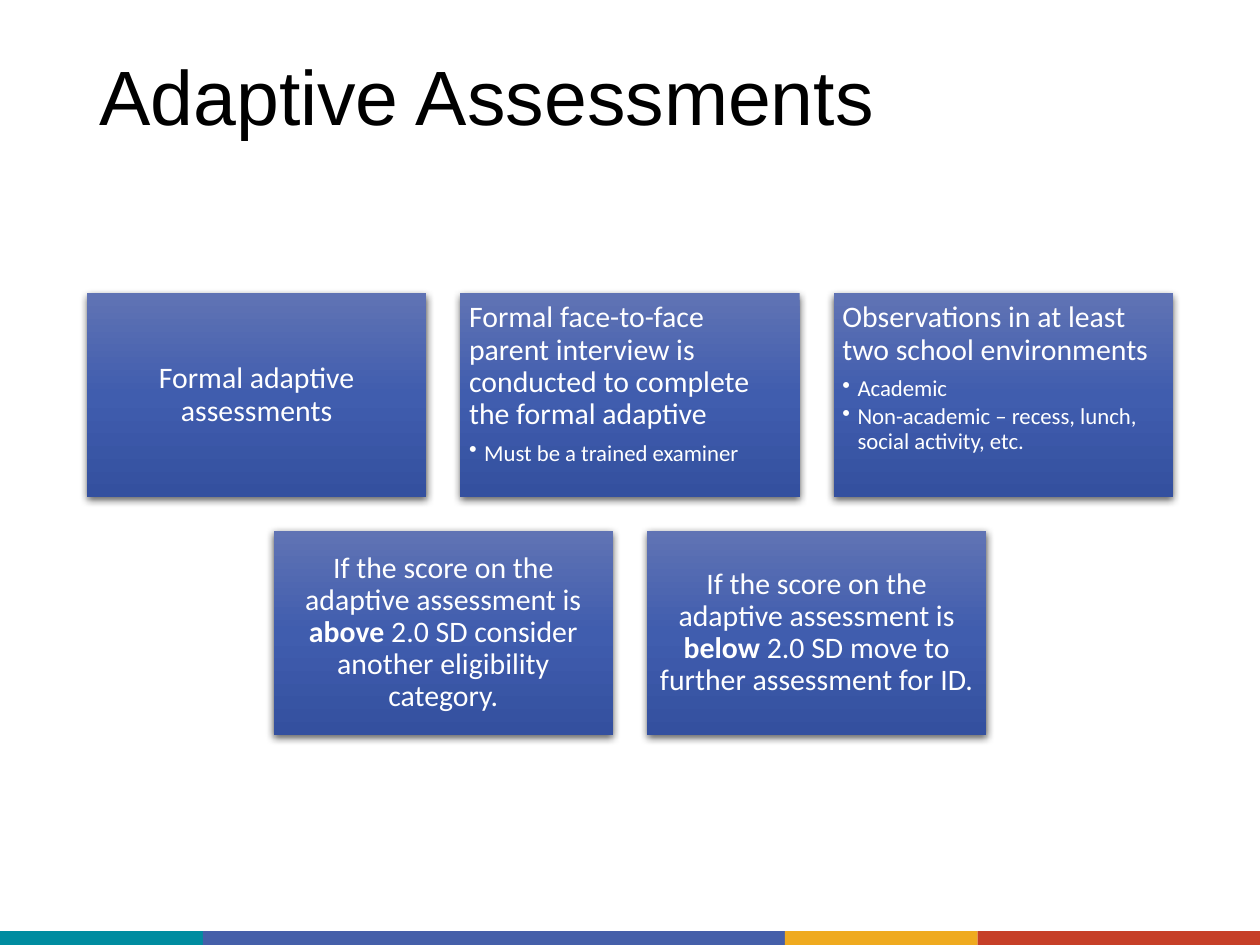
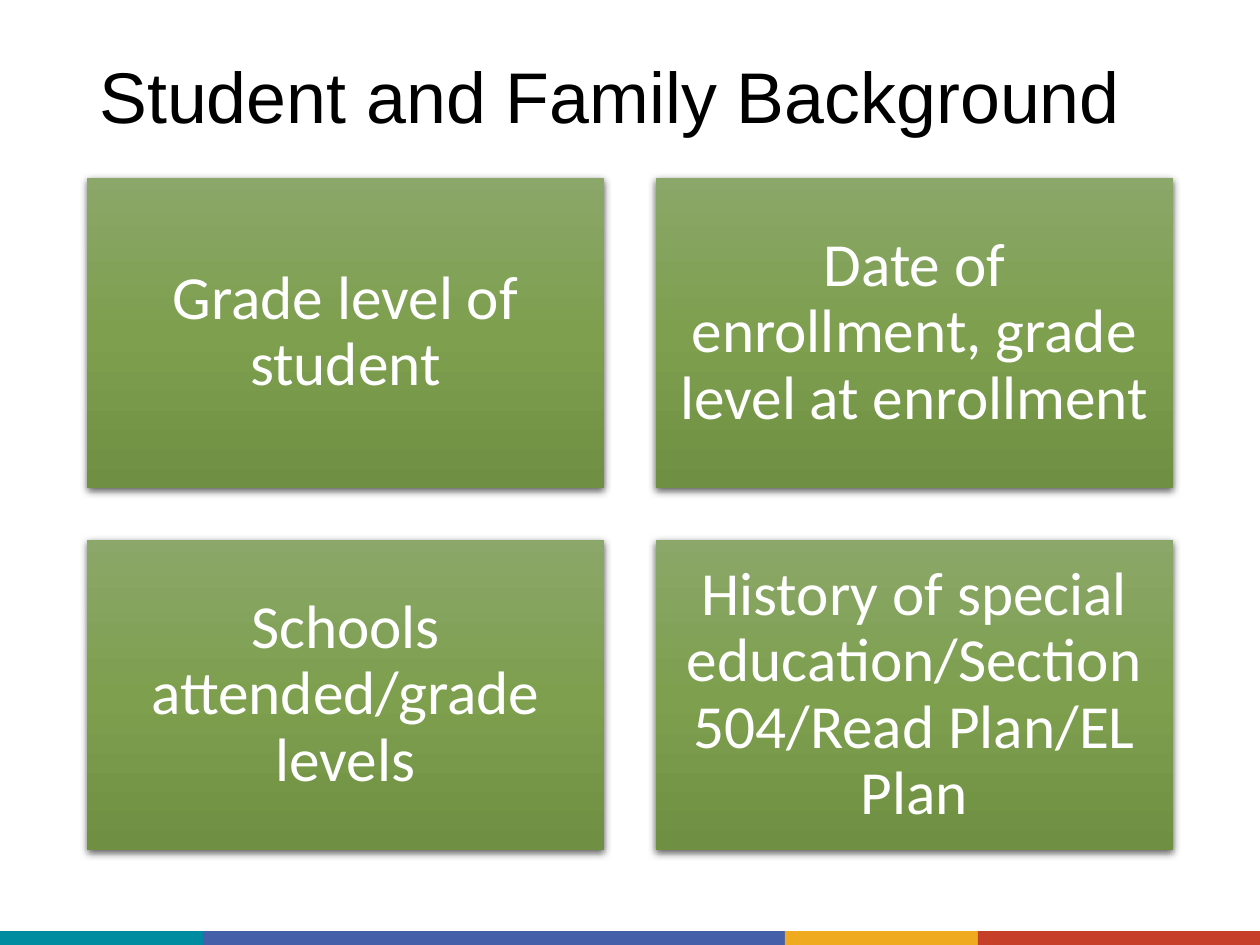
"""Builds two assessment slides with centred grids of gradient boxes."""
from lxml import etree
from pptx import Presentation
from pptx import util as u
from pptx.dml.color import RGBColor
from pptx.enum import shapes, text
from pptx.oxml import ns

COLORS = {
    "teal": "008CA0", "blue": "455FA9", "amber": "EFAA1F", "red": "C63F28",
    "black": "000000", "white": "FFFFFF",
}
GRADIENTS = {
    "blue": ("6073B4", "405DAE", "34509F"),
    "green": ("8BA769", "7D9F4E", "6F9042"),
}
BANDS = [("teal", 0, 1.61), ("blue", 1.61, 6.23), ("amber", 6.23, 7.76), ("red", 7.76, 10)]
BAND_TOP, BAND_HEIGHT = 7.39, 0.11
LEFT, WIDTH, MIDDLE = 0.69, 8.62, 4.08
GAP_RATIO, HEIGHT_RATIO = 0.1, 0.6

SLIDES = [
    {
        "title": "Adaptive Assessments", "title_size": 44, "gradient": "blue",
        "columns": 3, "size": 17, "bullet_size": 13, "inset": 0.07,
        "boxes": [
            {"text": "Formal adaptive assessments"},
            {"text": "Formal face-to-face parent interview is conducted to complete the formal adaptive",
             "bullets": ["Must be a trained examiner"]},
            {"text": "Observations in at least two school environments",
             "bullets": ["Academic", "Non-academic – recess, lunch, social activity, etc."]},
            {"text": "If the score on the adaptive assessment is above 2.0 SD consider another eligibility category.",
             "bold": "above"},
            {"text": "If the score on the adaptive assessment is below 2.0 SD move to further assessment for ID.",
             "bold": "below"},
        ],
    },
    {
        "title": "Student and Family Background", "title_size": 41, "gradient": "green",
        "columns": 2, "size": 35, "inset": 0.15,
        "boxes": [
            {"text": "Grade level of student"},
            {"text": "Date of enrollment, grade level at enrollment"},
            {"text": "Schools attended/grade levels"},
            {"text": "History of special education/Section 504/Read Plan/EL Plan"},
        ],
    },
]


def add_xml(parent, tag, **attrs):
    return etree.SubElement(parent, ns.qn(tag), attrs)


def style(font, name, size, color):
    font.name, font.size = name, u.Pt(size)
    font.color.rgb = RGBColor.from_string(COLORS[color])


def add_rect(s, x, y, w, h):
    sp = s.shapes.add_shape(shapes.MSO_SHAPE.RECTANGLE, *map(u.Inches, (x, y, w, h)))
    sp.shadow.inherit = False
    sp.line.fill.background()
    return sp


def add_bands(s):
    for color, start, end in BANDS:
        sp = add_rect(s, start, BAND_TOP, end - start, BAND_HEIGHT)
        sp.fill.solid()
        sp.fill.fore_color.rgb = RGBColor.from_string(COLORS[color])


def add_title(s, title, size):
    tf = s.shapes.add_textbox(*map(u.Inches, (LEFT, 0.4, WIDTH, 0.8))).text_frame
    tf.word_wrap = True
    tf.vertical_anchor = text.MSO_ANCHOR.MIDDLE
    tf.text = title
    p = tf.paragraphs[0]
    p.line_spacing = 0.9
    style(p.runs[0].font, "Arial", size, "black")


def set_gradient(sp, stops):
    sp.fill.background()
    fill = sp._element.spPr.find(ns.qn("a:noFill"))
    grad = etree.Element(ns.qn("a:gradFill"), rotWithShape="1")
    gs_list = add_xml(grad, "a:gsLst")
    for i, color in enumerate(stops):
        gs = add_xml(gs_list, "a:gs", pos=str(i * 50000))
        add_xml(gs, "a:srgbClr", val=color)
    add_xml(grad, "a:lin", ang="5400000", scaled="0")
    fill.getparent().replace(fill, grad)


def set_shadow(sp):
    effects = sp._element.spPr.find(ns.qn("a:effectLst"))
    shadow = add_xml(effects, "a:outerShdw", blurRad=str(u.Pt(4.5)), dist=str(u.Pt(1.5)),
                     dir="5400000", algn="ctr", rotWithShape="0")
    color = add_xml(shadow, "a:srgbClr", val=COLORS["black"])
    add_xml(color, "a:alpha", val="63000")


def set_bullet(p):
    pPr = p._p.get_or_add_pPr()
    pPr.set("marL", str(u.Inches(0.12)))
    pPr.set("indent", str(-u.Inches(0.12)))
    add_xml(pPr, "a:buChar", char="•")


def add_runs(p, content, bold):
    parts = content.partition(bold) if bold else [content]
    for part in parts:
        r = p.add_run()
        r.text = part
        r.font.bold = part == bold


def fill_box(sp, box, slide):
    bullets = box.get("bullets", [])
    tf = sp.text_frame
    tf.word_wrap = True
    tf.vertical_anchor = text.MSO_ANCHOR.TOP if bullets else text.MSO_ANCHOR.MIDDLE
    tf.margin_left = tf.margin_right = tf.margin_top = tf.margin_bottom = u.Inches(slide["inset"])
    add_runs(tf.paragraphs[0], box["text"], box.get("bold"))
    for bullet in bullets:
        p = tf.add_paragraph()
        p.text = bullet
        set_bullet(p)
    for i, p in enumerate(tf.paragraphs):
        p.alignment = text.PP_ALIGN.LEFT if bullets else text.PP_ALIGN.CENTER
        p.line_spacing = 0.9
        if i < len(bullets):
            p.space_after = u.Pt(2 if i else 6)
        for r in p.runs:
            style(r.font, "Calibri", slide["bullet_size"] if i else slide["size"], "white")


def add_grid(s, slide):
    boxes, n = slide["boxes"], slide["columns"]
    w = WIDTH / (n + GAP_RATIO * (n - 1))
    h, gap = w * HEIGHT_RATIO, w * GAP_RATIO
    rows = [boxes[i:i + n] for i in range(0, len(boxes), n)]
    top = MIDDLE - (len(rows) * (h + gap) - gap) / 2
    for i, row in enumerate(rows):
        left = LEFT + (n - len(row)) * (w + gap) / 2
        for j, box in enumerate(row):
            sp = add_rect(s, left + j * (w + gap), top + i * (h + gap), w, h)
            set_gradient(sp, GRADIENTS[slide["gradient"]])
            set_shadow(sp)
            fill_box(sp, box, slide)


def main():
    prs = Presentation()
    prs.slide_width, prs.slide_height = u.Inches(10), u.Inches(7.5)
    for slide in SLIDES:
        s = prs.slides.add_slide(prs.slide_layouts[6])
        add_bands(s)
        add_title(s, slide["title"], slide["title_size"])
        add_grid(s, slide)
    prs.save("out.pptx")


if __name__ == "__main__":
    main()
